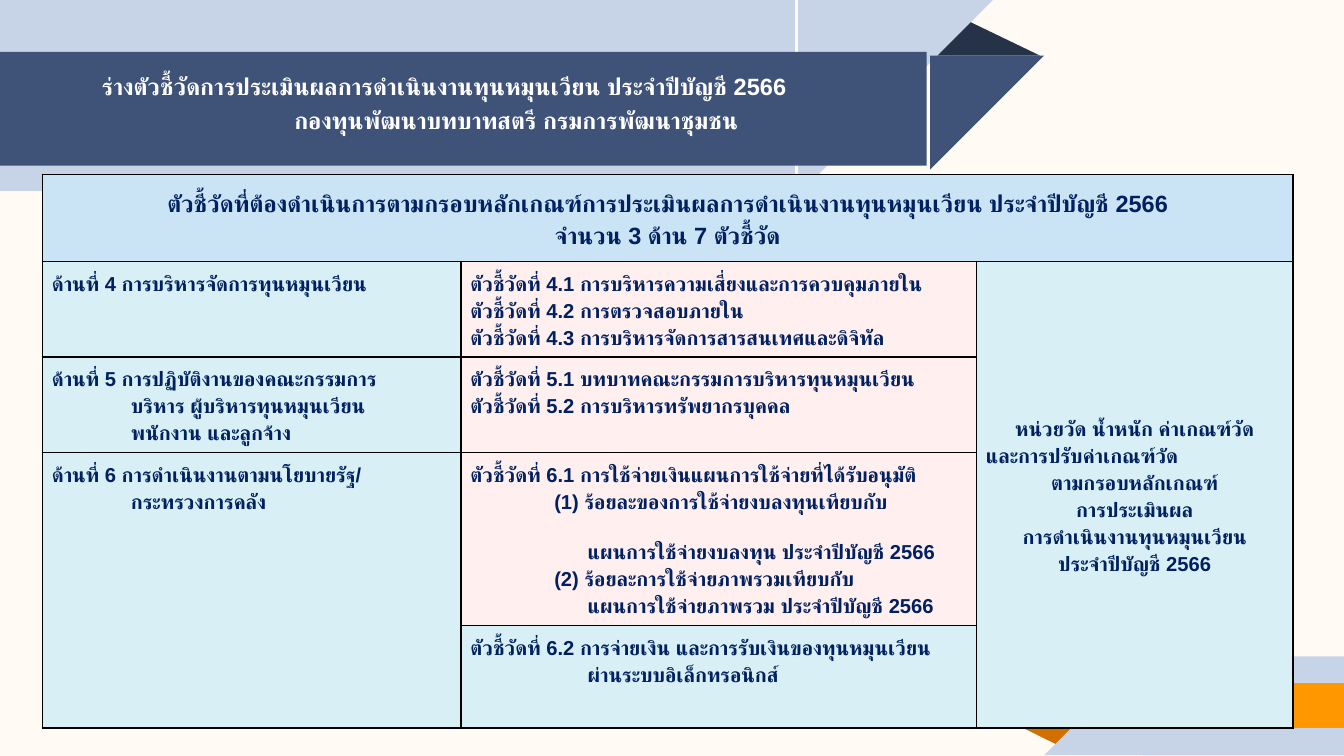
import pptx
import pptx.chart.data
import pptx.dml.color
import pptx.enum.shapes
import pptx.enum.text
import pptx.oxml
import pptx.oxml.ns
import pptx.util
from lxml import etree

Cm = pptx.util.Cm
Pt = pptx.util.Pt
KIND = pptx.enum.shapes.MSO_SHAPE
SIDE = pptx.enum.text.PP_ALIGN
MID = pptx.enum.text.MSO_ANCHOR.MIDDLE
TOP = pptx.enum.text.MSO_ANCHOR.TOP

NAVY, PALE, INK = "3F5378", "C7D3E6", "002060"
BLUE, AQUA, PINK = "CAE4F6", "D7EFF5", "FFEFEF"
AMBER, BLACK = "FF9800", "000000"

DECOR = [
    (KIND.ISOSCELES_TRIANGLE, 19.43, 0.38, 2.41, 0.79, "263248", 0),
    (KIND.RECTANGLE, 0, 0, 16.69, 4.01, PALE, 0),
    (KIND.RIGHT_TRIANGLE, 16.76, 0, 4.09, 4.09, PALE, 90),
    (KIND.RECTANGLE, 0, 1.09, 19.46, 2.39, NAVY, 0),
    (KIND.RIGHT_TRIANGLE, 19.53, 1.17, 2.39, 2.39, NAVY, 90),
    (KIND.ISOSCELES_TRIANGLE, 21.44, 15.27, 1.22, 0.41, "D26F00", 180),
    (KIND.RECTANGLE, 24, 13.79, 4.22, 2.08, PALE, 0),
    (KIND.RIGHT_TRIANGLE, 21.93, 13.79, 2.07, 2.07, PALE, 270),
    (KIND.RECTANGLE, 22.38, 14.35, 5.84, 0.94, AMBER, 0),
    (KIND.RIGHT_TRIANGLE, 21.46, 14.35, 0.94, 0.94, AMBER, 270),
]

TITLE = [
    ("ร่างตัวชี้วัดการประเมินผลการดำเนินงานทุนหมุนเวียน ประจำปีบัญชี 2566", 0.06),
    ("กองทุนพัฒนาบทบาทสตรี กรมการพัฒนาชุมชน", 4.1),
]
HEAD = [
    ("ตัวชี้วัดที่ต้องดำเนินการตามกรอบหลักเกณฑ์การประเมินผลการดำเนินงานทุนหมุนเวียน ประจำปีบัญชี 2566",),
    ("จำนวน 3 ด้าน 7 ตัวชี้วัด",),
]
UNIT = [
    ("หน่วยวัด น้ำหนัก ค่าเกณฑ์วัด",),
    ("และการปรับค่าเกณฑ์วัด",),
    ("ตามกรอบหลักเกณฑ์",),
    ("การประเมินผล",),
    ("การดำเนินงานทุนหมุนเวียน",),
    ("ประจำปีบัญชี 2566",),
]
BODY = [
    (1, 0, AQUA, [("ด้านที่ 4 การบริหารจัดการทุนหมุนเวียน",)]),
    (1, 1, PINK, [
        ("ตัวชี้วัดที่ 4.1 การบริหารความเสี่ยงและการควบคุมภายใน",),
        ("ตัวชี้วัดที่ 4.2 การตรวจสอบภายใน",),
        ("ตัวชี้วัดที่ 4.3 การบริหารจัดการสารสนเทศและดิจิทัล",)]),
    (2, 0, AQUA, [
        ("ด้านที่ 5 การปฏิบัติงานของคณะกรรมการ",),
        ("บริหาร ผู้บริหารทุนหมุนเวียน", 1.66),
        ("พนักงาน และลูกจ้าง", 1.66)]),
    (2, 1, PINK, [
        ("ตัวชี้วัดที่ 5.1 บทบาทคณะกรรมการบริหารทุนหมุนเวียน",),
        ("ตัวชี้วัดที่ 5.2 การบริหารทรัพยากรบุคคล",)]),
    (3, 0, AQUA, [
        ("ด้านที่ 6 การดำเนินงานตามนโยบายรัฐ/",),
        ("กระทรวงการคลัง", 1.66)]),
    (3, 1, PINK, [
        ("ตัวชี้วัดที่ 6.1 การใช้จ่ายเงินแผนการใช้จ่ายที่ได้รับอนุมัติ",),
        ("(1) ร้อยละของการใช้จ่ายงบลงทุนเทียบกับ", 1.76),
        ("แผนการใช้จ่ายงบลงทุน ประจำปีบัญชี 2566", 2.46, 14),
        ("(2) ร้อยละการใช้จ่ายภาพรวมเทียบกับ", 1.76),
        ("แผนการใช้จ่ายภาพรวม ประจำปีบัญชี 2566", 2.46)]),
    (4, 1, AQUA, [
        ("ตัวชี้วัดที่ 6.2 การจ่ายเงิน และการรับเงินของทุนหมุนเวียน",),
        ("ผ่านระบบอิเล็กทรอนิกส์", 2.46)]),
]


def paint(fill, tone):
    """Give a fill one solid colour."""
    fill.solid()
    fill.fore_color.rgb = pptx.dml.color.RGBColor.from_string(tone)


def write(frame, lines, size, tone, side=SIDE.LEFT):
    """Write lines of (text, indent in cm, space before in points)."""
    frame.text = "\n".join(line[0] for line in lines)
    for para, line in zip(frame.paragraphs, lines):
        indent, gap = (line[1:] + (0, 0))[:2]
        para.alignment = side
        para.line_spacing = 1.2
        para.space_before = Pt(gap)
        para._p.get_or_add_pPr().set("marL", str(Cm(indent)))
        for run in para.runs:
            run.font.size = Pt(size)
            run.font.bold = True
            run.font.name = "Arial"
            paint(run.font.fill, tone)
            script = etree.SubElement(run._r.get_or_add_rPr(), pptx.oxml.ns.qn("a:cs"))
            script.set("typeface", "Arial")


def decor(slide, kind, left, top, width, height, tone, turn):
    """Add one plain shape of the backdrop."""
    shape = slide.shapes.add_shape(kind, Cm(left), Cm(top), Cm(width), Cm(height))
    shape.shadow.inherit = False
    shape.rotation = turn
    shape.line.fill.background()
    paint(shape.fill, tone)
    if kind == KIND.ISOSCELES_TRIANGLE:
        shape.adjustments[0] = 0.32


def frame(cell):
    """Draw black borders on all sides of a cell."""
    props = cell._tc.get_or_add_tcPr()
    for spot, side in enumerate(("lnL", "lnR", "lnT", "lnB")):
        line = etree.Element(pptx.oxml.ns.qn("a:" + side), w=str(Pt(1)))
        solid = etree.SubElement(line, pptx.oxml.ns.qn("a:solidFill"))
        etree.SubElement(solid, pptx.oxml.ns.qn("a:srgbClr"), val=BLACK)
        props.insert(spot, line)


def put(cell, tone, lines, size=12, side=SIDE.LEFT, anchor=TOP):
    """Fill one cell with colour and text."""
    paint(cell.fill, tone)
    cell.vertical_anchor = anchor
    write(cell.text_frame, lines, size, INK, side)


def grid(slide):
    """Add the table of indicators."""
    wide, high = (8.79, 10.82, 6.65), (1.83, 1.98, 1.88, 3.63, 2.16)
    table = slide.shapes.add_table(len(high), len(wide), Cm(0.89), Cm(3.66),
                                   Cm(sum(wide)), Cm(sum(high))).table
    table.first_row = table.horz_banding = False
    for col, width in zip(table.columns, wide):
        col.width = Cm(width)
    for row, height in zip(table.rows, high):
        row.height = Cm(height)
    for cell in table.iter_cells():
        cell.margin_left = cell.margin_right = Cm(0.2)
        cell.margin_top = cell.margin_bottom = Cm(0.15)
        paint(cell.fill, AQUA)
    table.cell(0, 0).merge(table.cell(0, 2))
    table.cell(1, 2).merge(table.cell(4, 2))
    table.cell(3, 0).merge(table.cell(4, 0))
    put(table.cell(0, 0), BLUE, HEAD, 14, SIDE.CENTER, MID)
    put(table.cell(1, 2), AQUA, UNIT, 12, SIDE.CENTER, MID)
    table.cell(1, 2).text_frame.paragraphs[1].alignment = SIDE.LEFT
    for row, col, tone, lines in BODY:
        put(table.cell(row, col), tone, lines)
    for cell in table.iter_cells():
        frame(cell)


def title(slide):
    """Add the heading on the dark band."""
    box = slide.shapes.add_textbox(Cm(1.88), Cm(1.09), Cm(16.23), Cm(2.03))
    text = box.text_frame
    text.word_wrap = True
    text.vertical_anchor = MID
    text.margin_left = text.margin_right = Cm(0.2)
    text.margin_top = text.margin_bottom = Cm(0.2)
    write(text, TITLE, 14, "FFFFFF")


def main():
    """Build and save the slide."""
    deck = pptx.Presentation()
    deck.slide_width, deck.slide_height = Cm(28.22), Cm(15.88)
    slide = deck.slides.add_slide(deck.slide_layouts[6])
    paint(slide.background.fill, "FFFBF4")
    for item in DECOR:
        decor(slide, *item)
    grid(slide)
    title(slide)
    deck.save("out.pptx")


if __name__ == "__main__":
    main()
